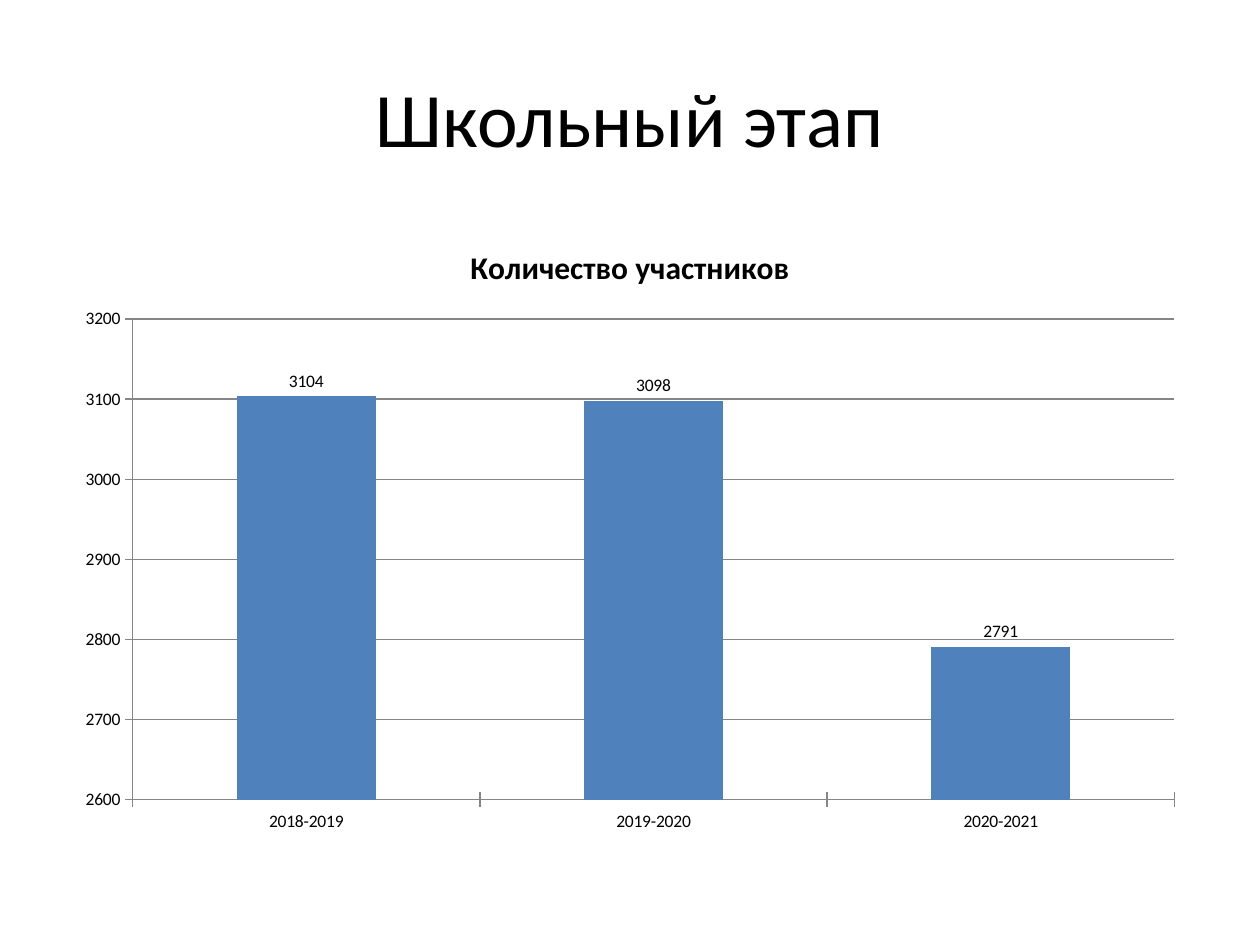
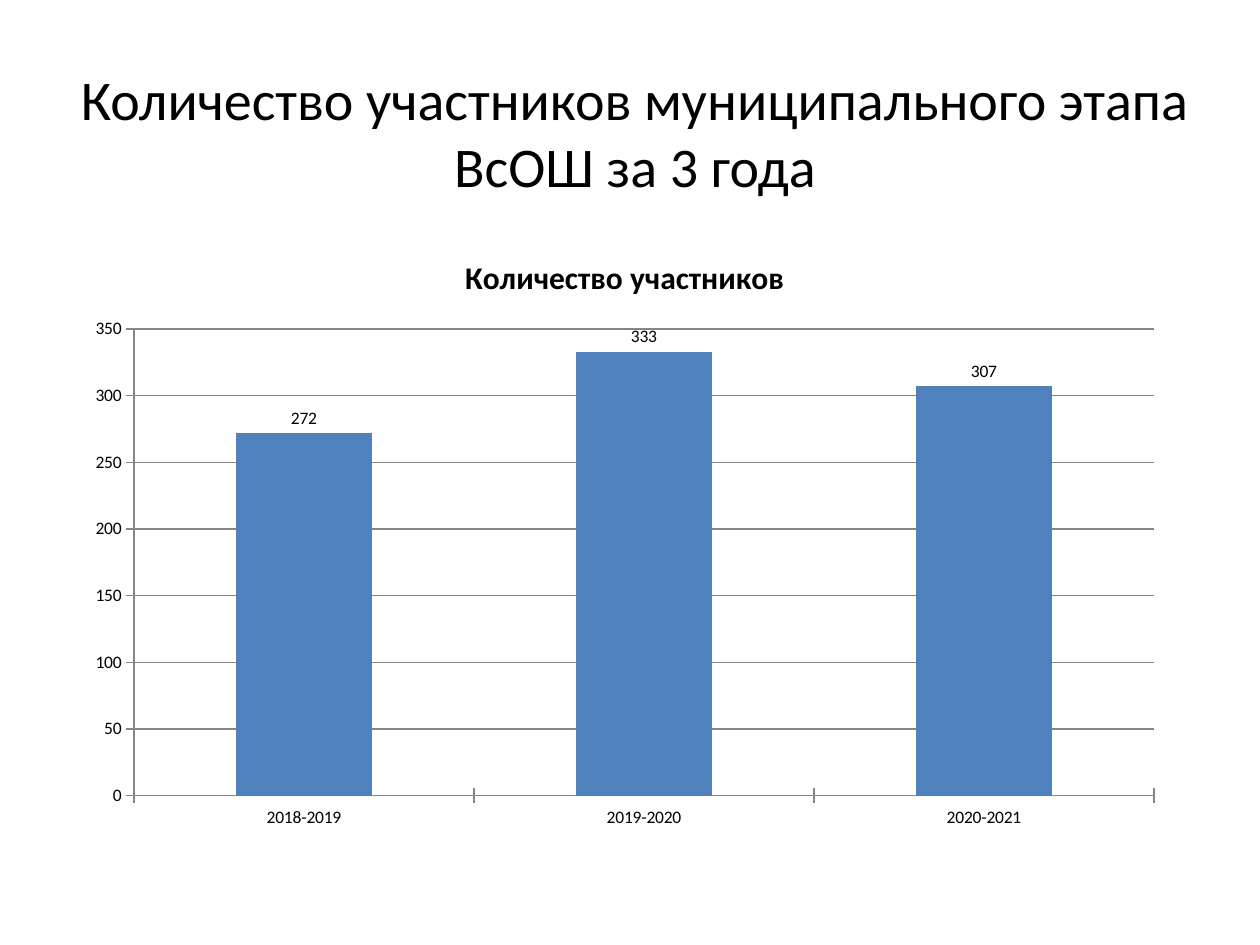
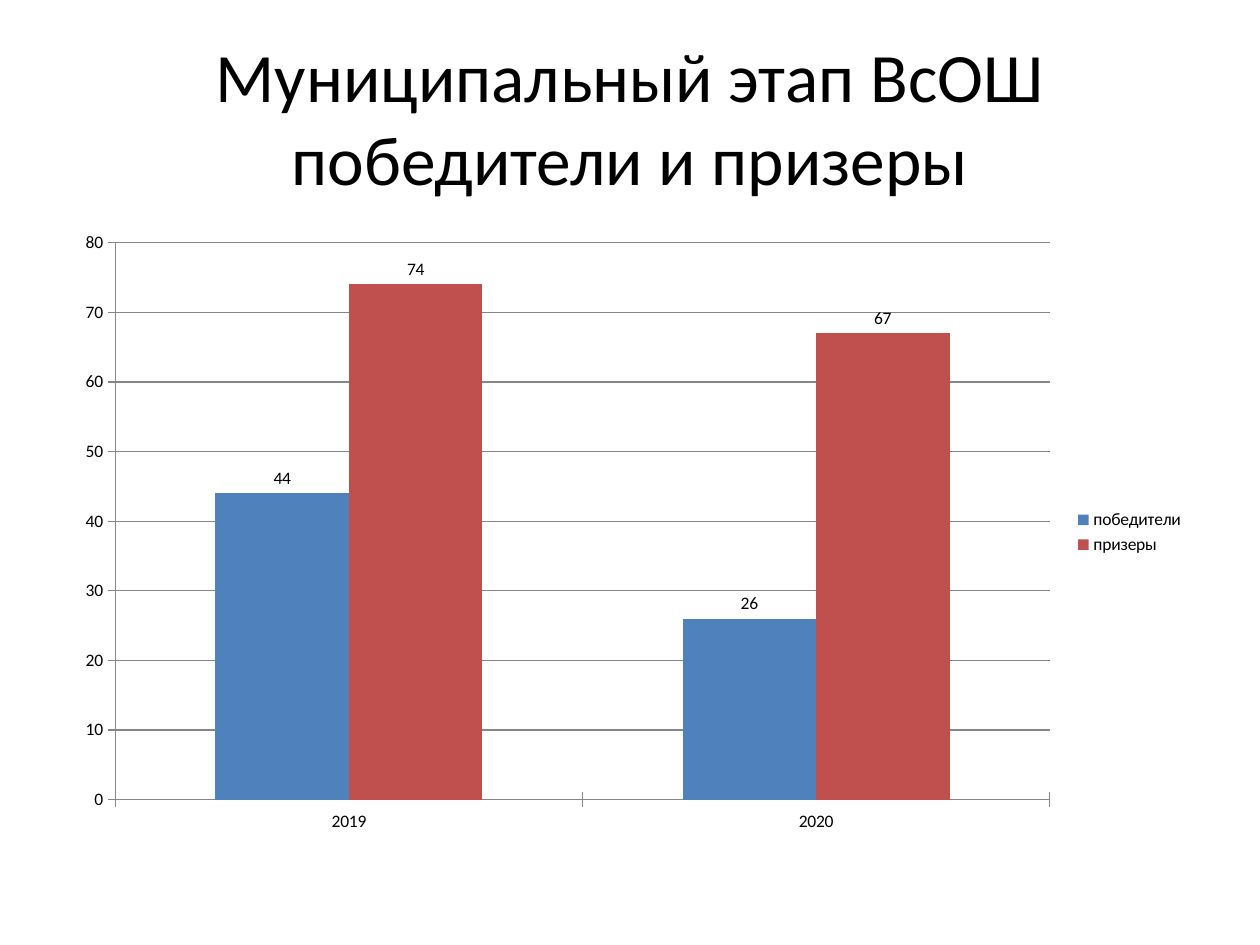
import dataclasses
import typing

import pptx
import pptx.chart.data
import pptx.dml.color
import pptx.enum.chart
import pptx.enum.text
import pptx.util

Pt = pptx.util.Pt
RGB = pptx.dml.color.RGBColor


# Theme
@dataclasses.dataclass(frozen=True)
class Theme:
    font: str = "Calibri"
    text: RGB = RGB(0x00, 0x00, 0x00)
    background: RGB = RGB(0xFF, 0xFF, 0xFF)
    axis: RGB = RGB(0x86, 0x86, 0x86)
    series: tuple[RGB, ...] = (RGB(0x4F, 0x81, 0xBD), RGB(0xC0, 0x50, 0x4D))
    chart_title_size: float = 18
    chart_size: float = 10
    axis_width: float = 0.75


THEME = Theme()


# Content
class Box(typing.NamedTuple):
    left: float
    top: float
    width: float
    height: float

    def lengths(self) -> list[int]:
        return [Pt(value) for value in self]


class Scale(typing.NamedTuple):
    minimum: int
    maximum: int
    step: int


@dataclasses.dataclass(frozen=True)
class StageSlide:
    heading: str
    heading_size: float
    years: tuple[str, ...]
    results: dict[str, tuple[int, ...]]
    scale: Scale
    heading_box: Box = Box(36, 21.6, 648, 90)
    chart_box: Box = Box(36, 126, 648, 356.4)


SCHOOL_YEARS = ("2018-2019", "2019-2020", "2020-2021")
PARTICIPANTS = "Количество участников"

STAGES = (
    StageSlide("Школьный этап", 44, SCHOOL_YEARS,
               {PARTICIPANTS: (3104, 3098, 2791)}, Scale(2600, 3200, 100)),
    StageSlide("Количество участников муниципального этапа ВсОШ за 3 года", 32, SCHOOL_YEARS,
               {PARTICIPANTS: (272, 333, 307)}, Scale(0, 350, 50),
               Box(36, 30, 654, 90), Box(42, 132, 630, 348)),
    StageSlide("Муниципальный этап ВсОШ\vпобедители и призеры", 39.6, ("2019", "2020"),
               {"победители": (44, 26), "призеры": (74, 67)}, Scale(0, 80, 10)),
)


# Formatting
def apply(target: typing.Any, values: dict[str, typing.Any]) -> None:
    for name, value in values.items():
        setattr(target, name, value)


def style_font(font: typing.Any, size: float, bold: bool = False) -> None:
    apply(font, {"name": THEME.font, "size": Pt(size), "bold": bold})
    font.color.rgb = THEME.text


def style_line(line: typing.Any) -> None:
    line.color.rgb = THEME.axis
    line.width = Pt(THEME.axis_width)


# Parts of a slide
def draw_heading(slide: typing.Any, stage: StageSlide) -> None:
    frame = slide.shapes.add_textbox(*stage.heading_box.lengths()).text_frame
    apply(frame, {"word_wrap": True, "vertical_anchor": pptx.enum.text.MSO_ANCHOR.MIDDLE,
                  "text": stage.heading})
    line = frame.paragraphs[0]
    line.alignment = pptx.enum.text.PP_ALIGN.CENTER
    for run in line.runs:
        style_font(run.font, stage.heading_size)


def draw_axes(chart: typing.Any, scale: Scale) -> None:
    for axis in (chart.category_axis, chart.value_axis):
        axis.major_tick_mark = pptx.enum.chart.XL_TICK_MARK.CROSS
        style_line(axis.format.line)
    apply(chart.value_axis, {"minimum_scale": scale.minimum, "maximum_scale": scale.maximum,
                             "major_unit": scale.step, "has_major_gridlines": True})
    style_line(chart.value_axis.major_gridlines.format.line)


def draw_columns(plot: typing.Any) -> None:
    apply(plot, {"gap_width": 150, "overlap": 0, "vary_by_categories": False})
    for series, color in zip(plot.series, THEME.series):
        series.invert_if_negative = False
        series.format.fill.solid()
        series.format.fill.fore_color.rgb = color
        labels = series.data_labels
        apply(labels, {"show_value": True,
                       "position": pptx.enum.chart.XL_LABEL_POSITION.OUTSIDE_END})
        style_font(labels.font, THEME.chart_size)


def draw_results(slide: typing.Any, stage: StageSlide) -> None:
    results = pptx.chart.data.CategoryChartData()
    results.categories = stage.years
    for name, counts in stage.results.items():
        results.add_series(name, counts)
    chart = slide.shapes.add_chart(pptx.enum.chart.XL_CHART_TYPE.COLUMN_CLUSTERED,
                                   *stage.chart_box.lengths(), results).chart
    style_font(chart.font, THEME.chart_size)

    # A single series is named by the chart title, several by the legend
    single = len(stage.results) == 1
    apply(chart, {"has_title": single, "has_legend": not single})
    if single:
        caption = chart.chart_title.text_frame
        caption.text = next(iter(stage.results))
        style_font(caption.paragraphs[0].runs[0].font, THEME.chart_title_size, bold=True)
    else:
        apply(chart.legend, {"position": pptx.enum.chart.XL_LEGEND_POSITION.RIGHT,
                             "include_in_layout": False})
        style_font(chart.legend.font, THEME.chart_size)

    draw_axes(chart, stage.scale)
    draw_columns(chart.plots[0])


# Presentation
def main() -> None:
    deck = pptx.Presentation()
    apply(deck, {"slide_width": Pt(720), "slide_height": Pt(540)})
    for stage in STAGES:
        slide = deck.slides.add_slide(deck.slide_layouts[6])
        slide.background.fill.solid()
        slide.background.fill.fore_color.rgb = THEME.background
        draw_heading(slide, stage)
        draw_results(slide, stage)
    deck.save("out.pptx")


if __name__ == "__main__":
    main()
